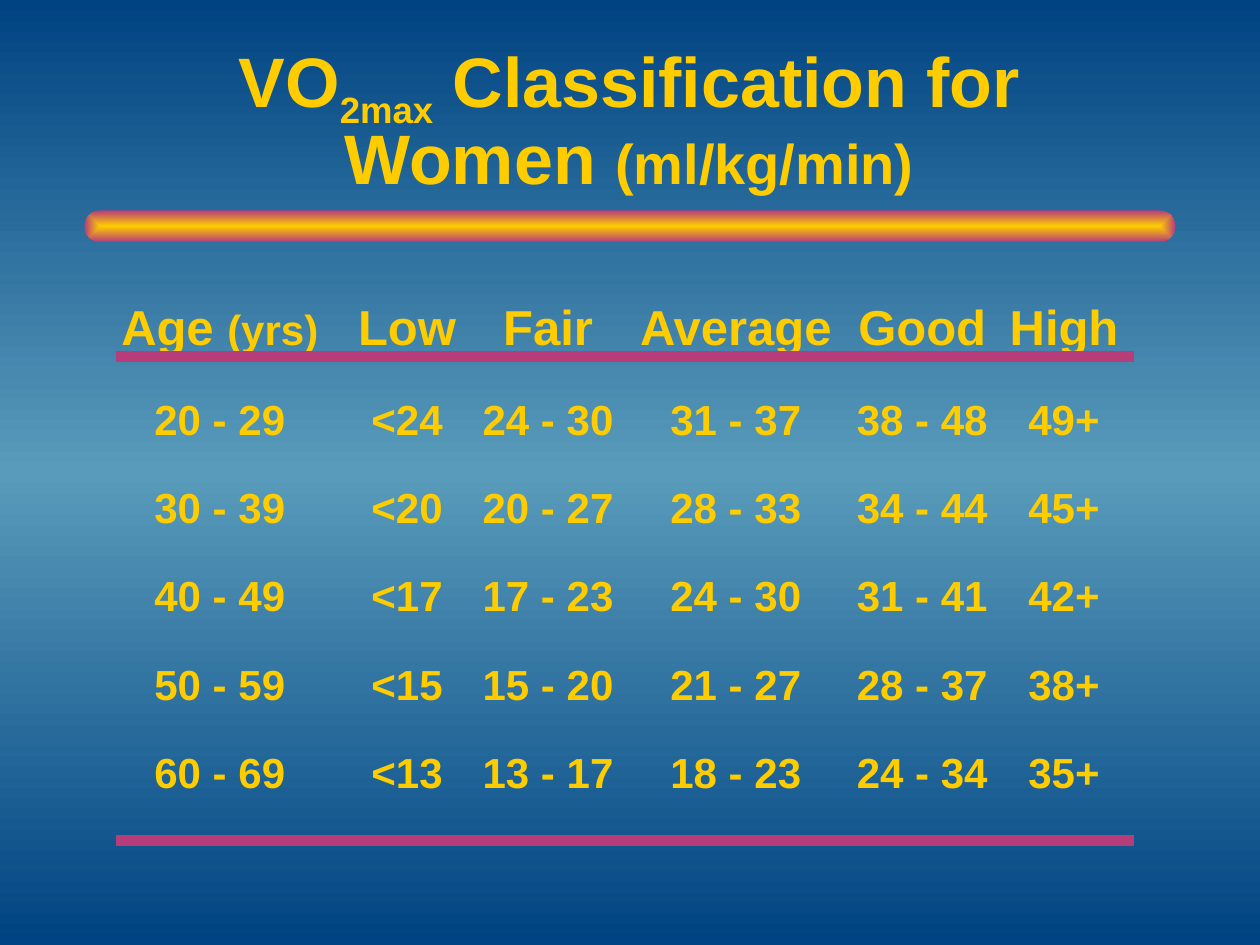
import pptx
import pptx.util
import pptx.dml.color
import pptx.enum.shapes
import pptx.enum.text
import pptx.oxml
import pptx.oxml.ns
from dataclasses import dataclass

SCALE = 9144  # EMU per px, 100 px to the inch


@dataclass(frozen=True)
class Theme:
    font: str = "Arial"
    gold: str = "FFCC00"
    rose: str = "B73D7A"
    navy: str = "004382"
    sky: str = "599BBA"
    big: int = 40
    sub: int = 36
    unit: int = 32
    head: int = 28
    body: int = 24
    rule: int = 6


def px(*nums):
    return [pptx.util.Emu(num * SCALE) for num in nums]


def color(code):
    return pptx.dml.color.RGBColor.from_string(code)


class Deck:
    def __init__(self, theme, wide, high):
        self.theme = theme
        self.prs = pptx.Presentation()
        self.prs.slide_width, self.prs.slide_height = px(wide, high)
        self.slide = self.prs.slides.add_slide(self.prs.slide_layouts[5])

    def blend(self, fill, root, stops, way):
        """Fill with (percent, colour) stops; way is the direction element."""
        fill.gradient()
        node = root.find(".//" + pptx.oxml.ns.qn("a:gradFill"))
        node.clear()
        names = pptx.oxml.ns.nsdecls("a")
        marks = "".join(
            f'<a:gs pos="{pos * 1000}"><a:srgbClr val="{code}"/></a:gs>'
            for pos, code in stops)
        for part in (f"<a:gsLst {names}>{marks}</a:gsLst>",
                     way.replace(" ", f" {names} ", 1)):
            node.append(pptx.oxml.parse_xml(part))

    def back(self, stops):
        self.blend(self.slide.background.fill, self.slide.element, stops,
                   '<a:lin ang="5400000" scaled="0"/>')

    def bar(self, box, stops):
        kind = pptx.enum.shapes.MSO_SHAPE.ROUNDED_RECTANGLE
        shape = self.slide.shapes.add_shape(kind, *px(*box))
        shape.adjustments[0] = 0.5
        shape.shadow.inherit = False
        shape.line.fill.background()
        self.blend(shape.fill, shape.element, stops,
                   '<a:path path="shape"><a:fillToRect l="50000" t="50000" '
                   'r="50000" b="50000"/></a:path>')

    def line(self, left, right, top):
        kind = pptx.enum.shapes.MSO_CONNECTOR.STRAIGHT
        rule = self.slide.shapes.add_connector(
            kind, *px(left, top, right, top))
        rule.line.color.rgb = color(self.theme.rose)
        rule.line.width = pptx.util.Pt(self.theme.rule)
        props = rule.element.spPr
        props.append(props.makeelement(pptx.oxml.ns.qn("a:effectLst"), {}))

    def text(self, para, runs, space):
        """Add (text, size) runs; a third item is the baseline shift."""
        para.alignment = pptx.enum.text.PP_ALIGN.CENTER
        para.line_spacing = space
        for words, size, *shift in runs:
            run = para.add_run()
            run.text = words
            run.font.name = self.theme.font
            run.font.size = pptx.util.Pt(size)
            run.font.bold = True
            run.font.color.rgb = color(self.theme.gold)
            if shift:
                run.font._element.set("baseline", str(shift[0] * 1000))

    def title(self, box, runs):
        shape = self.slide.shapes.title
        shape.left, shape.top, shape.width, shape.height = px(*box)
        frame = shape.text_frame
        frame.auto_size = pptx.enum.text.MSO_AUTO_SIZE.NONE
        frame.vertical_anchor = pptx.enum.text.MSO_ANCHOR.MIDDLE
        self.text(frame.paragraphs[0], runs, 0.9)

    def column(self, box, head, cells):
        frame = self.slide.shapes.add_textbox(*px(*box)).text_frame
        frame.word_wrap = False
        frame.auto_size = pptx.enum.text.MSO_AUTO_SIZE.SHAPE_TO_FIT_TEXT
        self.text(frame.paragraphs[0], head, 2.0)
        for cell in cells:
            self.text(frame.add_paragraph(), [(cell, self.theme.body)], 1.75)


def main():
    theme = Theme()
    deck = Deck(theme, 1000, 750)

    # Background and title bar
    deck.back([(0, theme.navy), (50, theme.sky), (100, theme.navy)])
    deck.bar((67, 167, 866, 25), [(0, theme.gold), (100, theme.rose)])

    # Title
    deck.title((87, 33, 825, 125), [
        ("VO", theme.big),
        ("2max", theme.sub, -25),
        (" Classification for Women ", theme.big),
        ("(ml/kg/min)", theme.unit),
    ])

    # Columns: left, width, heading runs, values by age group
    columns = [
        (86, 177, [("Age ", theme.head), ("(yrs)", theme.body)],
         "20 - 29|30 - 39|40 - 49|50 - 59|60 - 69"),
        (274, 98, [("Low", theme.head)], "<24|<20|<17|<15|<13"),
        (373, 124, [("Fair", theme.head)],
         "24 - 30|20 - 27|17 - 23|15 - 20|13 - 17"),
        (497, 174, [("Average", theme.head)],
         "31 - 37|28 - 33|24 - 30|21 - 27|18 - 23"),
        (670, 124, [("Good", theme.head)],
         "38 - 48|34 - 44|31 - 41|28 - 37|24 - 34"),
        (791, 107, [("High", theme.head)], "49+|45+|42+|38+|35+"),
    ]
    for left, width, head, cells in columns:
        deck.column((left, 184, width, 523), head, cells.split("|"))

    # Rules below the headings and the last row
    for top in (667, 283):
        deck.line(92, 900, top)

    deck.prs.save("out.pptx")


if __name__ == "__main__":
    main()
